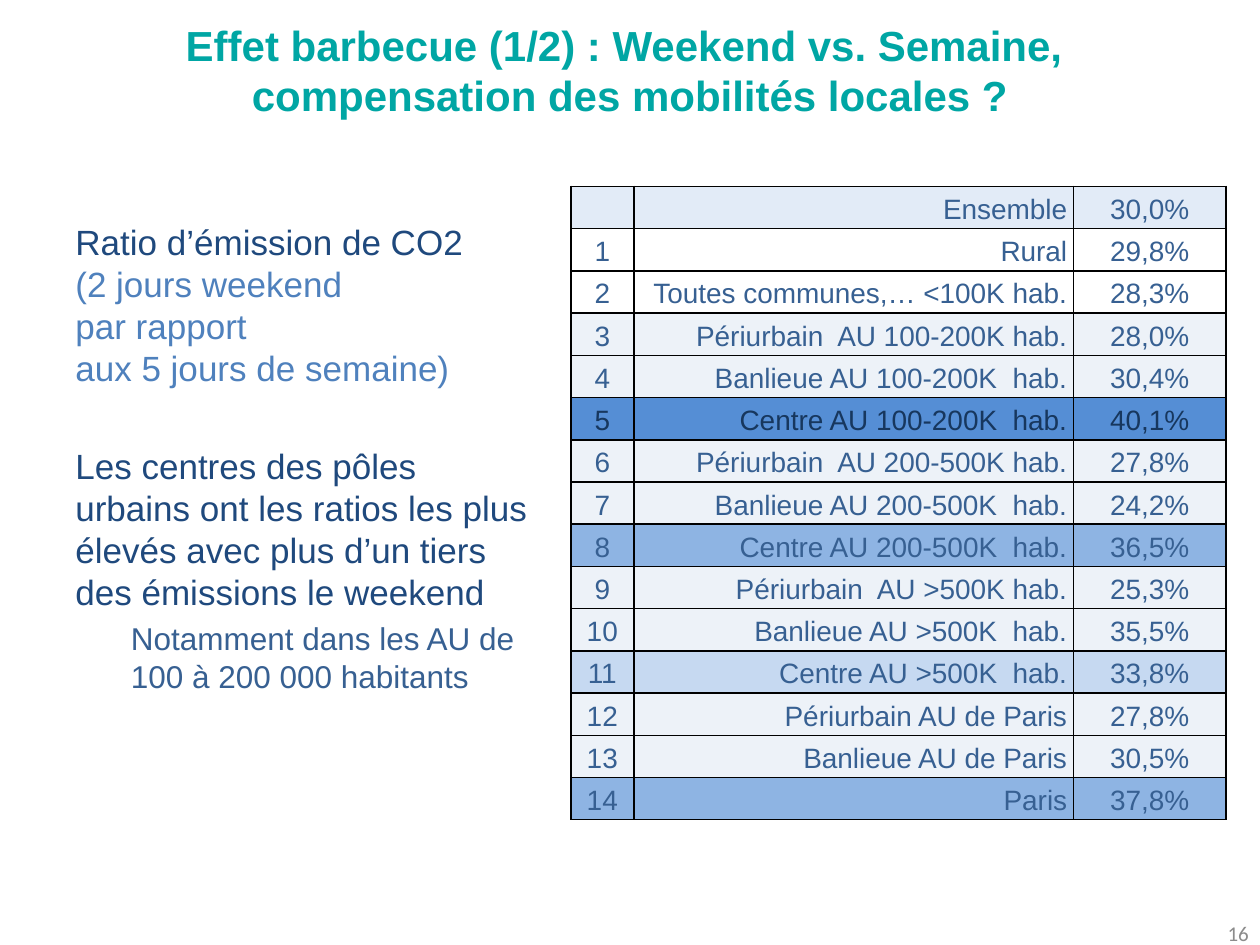
from lxml.etree import SubElement
from pptx import Presentation
from pptx.dml.color import RGBColor
from pptx.enum.text import MSO_ANCHOR, PP_ALIGN
from pptx.oxml import parse_xml
from pptx.oxml.ns import nsdecls, qn
from pptx.util import Inches, Pt

TEAL, NAVY, BLUE, SLATE, GREY = "00A6A4", "1F497D", "4F81BD", "376092", "8C8C8C"
DARK, STRONG, MEDIUM, LIGHT = "17375E", "558ED5", "8EB4E3", "C6D9F1"
PALE, WHITE = "DCE6F2", "FFFFFF"

BODY = [
    ("Ratio d’émission de CO2", {"color": NAVY}, {}),
    ("(2 jours weekend", {"color": BLUE}, {}),
    ("par rapport", {"color": BLUE}, {}),
    ("aux 5 jours de semaine)", {"color": BLUE}, {}),
    ("Les centres des pôles urbains ont les ratios les plus élevés "
     "avec plus d’un tiers des émissions le weekend",
     {"color": NAVY}, {"space_before": Pt(32)}),
    ("Notamment dans les AU de 100 à 200 000 habitants",
     {"color": SLATE, "size": Pt(18)}, {"level": 1, "space_before": Pt(3.6)}),
]

# Area, weekend ratio, fill, fill opacity in percent
ROWS = [
    ("Ensemble", "30,0%", LIGHT, 50),
    ("Rural", "29,8%", WHITE, 50),
    ("Toutes communes,… <100K hab.", "28,3%", WHITE, 50),
    ("Périurbain  AU 100-200K hab.", "28,0%", PALE, 50),
    ("Banlieue AU 100-200K  hab.", "30,4%", PALE, 50),
    ("Centre AU 100-200K  hab.", "40,1%", STRONG, 100),
    ("Périurbain  AU 200-500K hab.", "27,8%", PALE, 50),
    ("Banlieue AU 200-500K  hab.", "24,2%", PALE, 50),
    ("Centre AU 200-500K  hab.", "36,5%", MEDIUM, 100),
    ("Périurbain  AU >500K hab.", "25,3%", PALE, 50),
    ("Banlieue AU >500K  hab.", "35,5%", PALE, 50),
    ("Centre AU >500K  hab.", "33,8%", LIGHT, 100),
    ("Périurbain AU de Paris", "27,8%", PALE, 50),
    ("Banlieue AU de Paris", "30,5%", PALE, 50),
    ("Paris", "37,8%", MEDIUM, 100),
]
COLUMN_WIDTHS = (0.5, 3.49, 1.21)
COLUMN_ALIGNMENTS = (PP_ALIGN.CENTER, PP_ALIGN.RIGHT, PP_ALIGN.CENTER)
TABLE_HEIGHT = 5.03


def set_attributes(target, values):
    for name, value in values.items():
        setattr(target, name, value)


def paint(color_format, color):
    color_format.rgb = RGBColor.from_string(color)


def write_paragraph(paragraph, text, font, layout):
    """Fill a paragraph; line feeds in the text become line breaks."""
    set_attributes(paragraph, layout)
    for index, line in enumerate(text.split("\n")):
        if index:
            paragraph.add_line_break()
        run = paragraph.add_run()
        run.text = line
        values = {"name": "Arial", **font}
        paint(run.font.color, values.pop("color"))
        set_attributes(run.font, values)


def add_text(slide, box, paragraphs, anchor=MSO_ANCHOR.TOP):
    shape = slide.shapes.add_textbox(*map(Inches, box))
    frame = shape.text_frame
    set_attributes(frame, {"word_wrap": True, "vertical_anchor": anchor})
    for index, (text, font, layout) in enumerate(paragraphs):
        paragraph = frame.add_paragraph() if index else frame.paragraphs[0]
        write_paragraph(paragraph, text, font, layout)
        if layout.get("level"):
            properties = paragraph._p.get_or_add_pPr()
            properties.set("marL", str(Inches(0.44)))
            properties.set("indent", "0")


def format_cell(cell, fill, opacity):
    set_attributes(cell, {
        "vertical_anchor": MSO_ANCHOR.MIDDLE,
        "margin_left": Inches(0.05), "margin_right": Inches(0.05),
        "margin_top": 0, "margin_bottom": 0,
    })
    cell.fill.solid()
    paint(cell.fill.fore_color, fill)
    properties = cell._tc.get_or_add_tcPr()
    if opacity < 100:
        color = properties.find(".//" + qn("a:srgbClr"))
        SubElement(color, qn("a:alpha"), val=str(opacity * 1000))
    # Borders come before the fill
    for index, side in enumerate(("lnL", "lnR", "lnT", "lnB")):
        properties.insert(index, parse_xml(
            f'<a:{side} {nsdecls("a")} w="{Pt(1)}"><a:solidFill>'
            f'<a:srgbClr val="000000"/></a:solidFill></a:{side}>'))


def add_ratio_table(slide):
    frame = slide.shapes.add_table(
        len(ROWS), len(COLUMN_WIDTHS), Inches(4.53), Inches(1.48),
        Inches(sum(COLUMN_WIDTHS)), Inches(TABLE_HEIGHT))
    table = frame.table
    set_attributes(table, {"first_row": False, "horz_banding": False})
    for column, width in zip(table.columns, COLUMN_WIDTHS):
        column.width = Inches(width)
    for number, (area, ratio, fill, opacity) in enumerate(ROWS):
        table.rows[number].height = Inches(TABLE_HEIGHT / len(ROWS))
        font = {"size": Pt(16), "color": DARK if fill == STRONG else SLATE}
        texts = (str(number) if number else "", area, ratio)
        for index, (text, alignment) in enumerate(zip(texts, COLUMN_ALIGNMENTS)):
            cell = table.cell(number, index)
            format_cell(cell, fill, opacity)
            write_paragraph(cell.text_frame.paragraphs[0], text, font,
                            {"alignment": alignment, "line_spacing": 1.15})


def main():
    presentation = Presentation()
    presentation.slide_width, presentation.slide_height = Inches(10), Inches(7.5)
    slide = presentation.slides.add_slide(presentation.slide_layouts[6])

    # Title
    add_text(slide, (0, 0.16, 10, 0.79), [(
        "Effet barbecue (1/2) : Weekend vs. Semaine, \n"
        "compensation des mobilités locales ?",
        {"size": Pt(24), "bold": True, "color": TEAL},
        {"alignment": PP_ALIGN.CENTER})], MSO_ANCHOR.MIDDLE)

    # Comments on the left
    add_text(slide, (0.5, 1.7, 3.87, 4.25),
             [(text, {"size": Pt(20), **font}, layout)
              for text, font, layout in BODY])

    # Slide number
    add_text(slide, (7.68, 7.21, 2.33, 0.4), [(
        "16", {"name": "Calibri", "size": Pt(12), "color": GREY},
        {"alignment": PP_ALIGN.RIGHT})], MSO_ANCHOR.MIDDLE)

    # Ratios by area
    add_ratio_table(slide)

    presentation.save("out.pptx")


if __name__ == "__main__":
    main()
